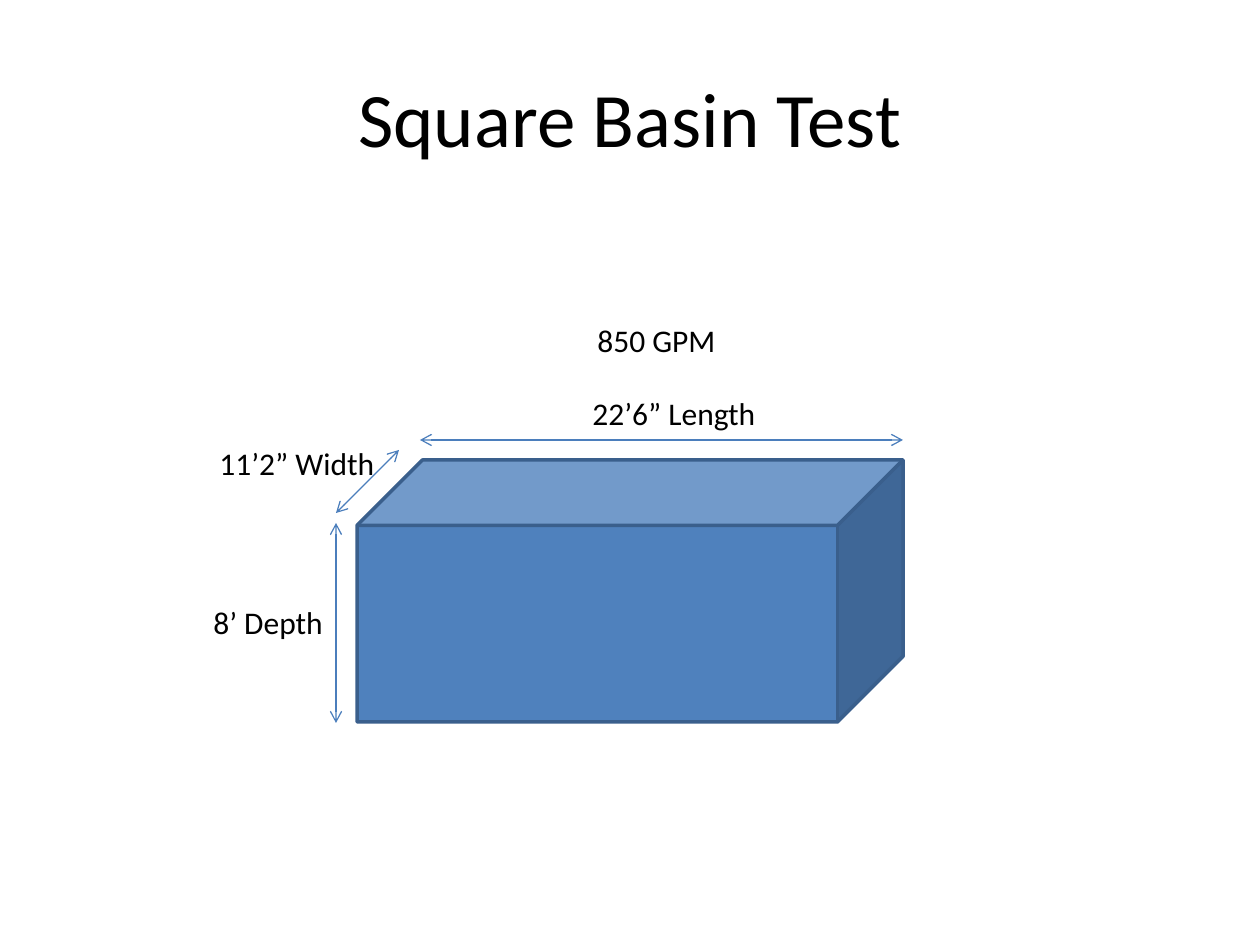
from dataclasses import dataclass

from lxml.etree import SubElement
from pptx import Presentation
from pptx.dml.color import RGBColor
from pptx.enum.shapes import MSO_CONNECTOR, MSO_SHAPE
from pptx.enum.text import MSO_ANCHOR, MSO_AUTO_SIZE, PP_ALIGN
from pptx.oxml.ns import qn
from pptx.util import Emu, Pt

SCALE = 914400 / 126


@dataclass(frozen=True)
class Theme:
    font: str = "Calibri"
    ink: RGBColor = RGBColor(0x00, 0x00, 0x00)
    fill: RGBColor = RGBColor(0x4F, 0x81, 0xBD)
    edge: RGBColor = RGBColor(0x3A, 0x5F, 0x8C)
    arrow: RGBColor = RGBColor(0x4B, 0x7E, 0xBC)
    title: int = 44
    label: int = 18


THEME = Theme()


def px(*nums):
    return [Emu(round(n * SCALE)) for n in nums]


def write(frame, text, size, align):
    frame.text = text
    para = frame.paragraphs[0]
    para.alignment = align
    font = para.runs[0].font
    font.name = THEME.font
    font.size = Pt(size)
    font.color.rgb = THEME.ink


def add_title(slide, text, box):
    title = slide.shapes.title
    title.left, title.top, title.width, title.height = px(*box)
    title.text_frame.vertical_anchor = MSO_ANCHOR.MIDDLE
    write(title.text_frame, text, THEME.title, PP_ALIGN.CENTER)


def add_basin(slide, box):
    cube = slide.shapes.add_shape(MSO_SHAPE.CUBE, *px(*box))
    cube.shadow.inherit = False
    cube.fill.solid()
    cube.fill.fore_color.rgb = THEME.fill
    cube.line.color.rgb = THEME.edge
    cube.line.width = Pt(2)


def add_arrow(slide, ends):
    """Draw a dimension line with an open arrowhead at both ends."""
    link = slide.shapes.add_connector(MSO_CONNECTOR.STRAIGHT, *px(*ends))
    link.line.color.rgb = THEME.arrow
    link.line.width = Pt(0.75)
    props = link.line._get_or_add_ln()
    for tag in ("a:headEnd", "a:tailEnd"):
        SubElement(props, qn(tag), type="arrow")
    SubElement(link._element.spPr, qn("a:effectLst"))


def add_label(slide, text, box):
    frame = slide.shapes.add_textbox(*px(*box)).text_frame
    frame.word_wrap = False
    frame.auto_size = MSO_AUTO_SIZE.SHAPE_TO_FIT_TEXT
    write(frame, text, THEME.label, PP_ALIGN.LEFT)


def main():
    deck = Presentation()
    deck.slide_width, deck.slide_height = px(1260, 945)
    slide = deck.slides.add_slide(deck.slide_layouts[5])

    add_title(slide, "Square Basin Test", (63, 38, 1134, 157))
    add_basin(slide, (357, 460, 546, 262))

    sides = [
        (" 22’6” Length", (573, 388, 198, 51), (420, 440, 903, 440)),
        ("8’ Depth", (201, 597, 136, 51), (336, 523, 336, 723)),
        ("11’2” Width", (207, 438, 181, 51), (399, 450, 336, 513)),
    ]
    for text, box, ends in sides:
        add_arrow(slide, ends)
        add_label(slide, text, box)

    add_label(slide, "850 GPM", (585, 315, 145, 51))
    deck.save("out.pptx")


if __name__ == "__main__":
    main()
